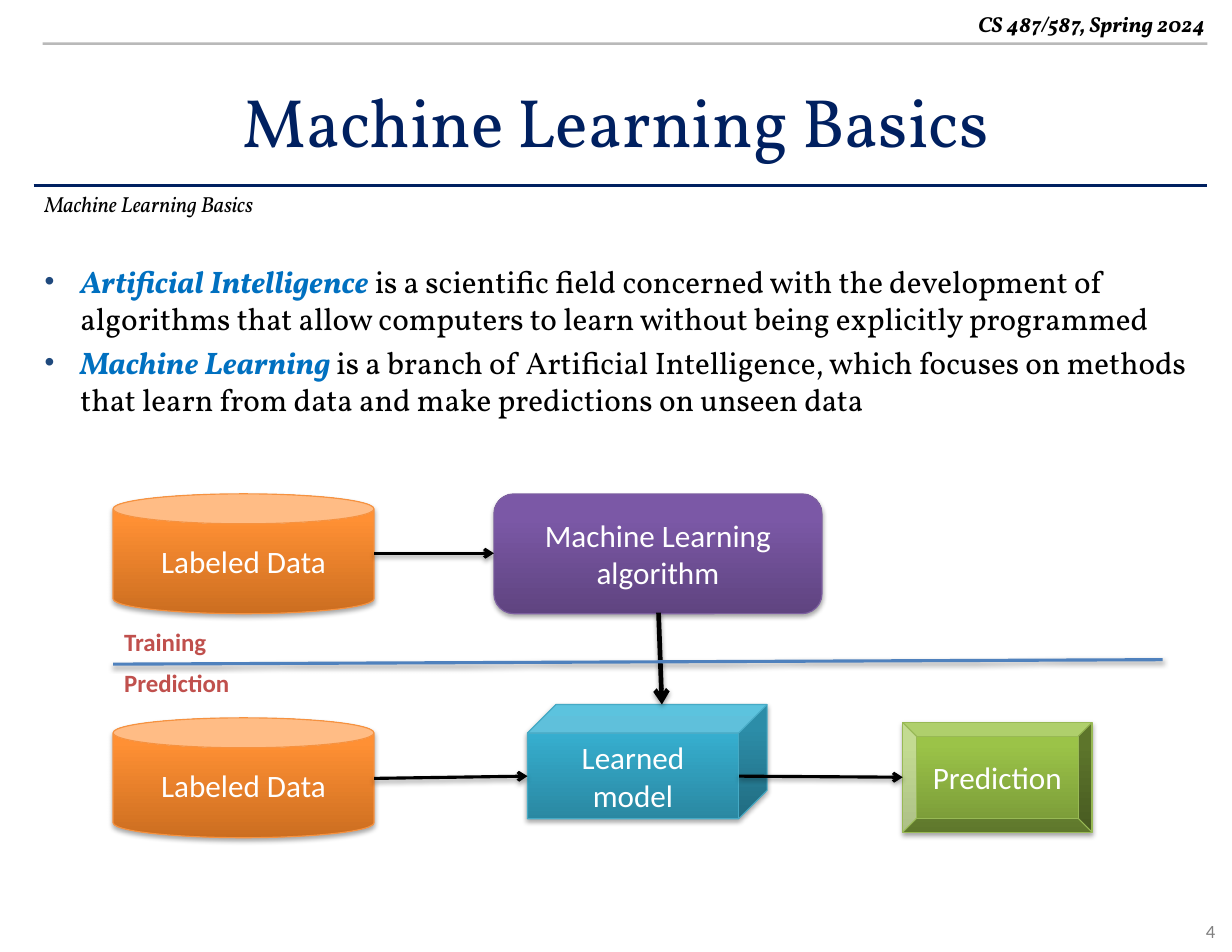
from copy import deepcopy
from dataclasses import dataclass

from pptx import Presentation
from pptx.dml.color import RGBColor
from pptx.enum.shapes import MSO_CONNECTOR, MSO_SHAPE
from pptx.enum.text import MSO_ANCHOR, PP_ALIGN
from pptx.oxml import parse_xml
from pptx.oxml.ns import nsdecls, qn
from pptx.util import Emu, Pt

PX = 9144  # EMU per px, 100 px to the inch
LEFT, CENTER, RIGHT = PP_ALIGN.LEFT, PP_ALIGN.CENTER, PP_ALIGN.RIGHT
TOP, MIDDLE = MSO_ANCHOR.TOP, MSO_ANCHOR.MIDDLE
STRAIGHT = MSO_CONNECTOR.STRAIGHT
CAN, ROUNDED = MSO_SHAPE.CAN, MSO_SHAPE.ROUNDED_RECTANGLE
CUBE, BEVEL = MSO_SHAPE.CUBE, MSO_SHAPE.BEVEL


@dataclass(frozen=True)
class Theme:
    serif: str = "Vollkorn"
    sans: str = "Calibri"
    black: str = "000000"
    white: str = "FFFFFF"
    navy: str = "002060"
    gray: str = "808080"
    term: str = "0070C0"
    bullet: str = "1F497D"
    divider: str = "4F81BD"
    label: str = "C0504D"
    # outline, then gradient from bottom to top
    orange: tuple = ("F69240", "CC6E20", "FF9034", "FF9136")
    purple: tuple = ("7D60A0", "5F4480", "7B58A6", "7C57A8")
    teal: tuple = ("46AAC5", "2A88A2", "37B1D2", "34B4D6")
    green: tuple = ("98B955", "779737", "9BC348", "9DC746")
    title_size: int = 44
    body_size: int = 20
    label_size: int = 16
    header_size: int = 14
    page_size: int = 12


def rgb(color):
    return RGBColor.from_string(color)


def px(*lengths):
    return [Emu(n * PX) for n in lengths]


class Slide:
    def __init__(self, prs, theme):
        self.t = theme
        self.s = prs.slides.add_slide(prs.slide_layouts[6])

    def font(self, run, size, color, name, bold=False, italic=False):
        f = run.font
        f.size, f.name, f.bold, f.italic = Pt(size), name, bold, italic
        f.color.rgb = rgb(color)

    def shadow(self, sp, alpha, dist):
        sp._element.spPr.append(parse_xml(
            f'<a:effectLst {nsdecls("a")}><a:outerShdw blurRad="40000" dist="{dist}" '
            f'dir="5400000" rotWithShape="0"><a:srgbClr val="{self.t.black}">'
            f'<a:alpha val="{alpha}000"/></a:srgbClr></a:outerShdw></a:effectLst>'))

    def text(self, box, text, size, color, name, align=LEFT, anchor=TOP,
             bold=False, italic=False, wrap=True):
        tf = self.s.shapes.add_textbox(*px(*box)).text_frame
        tf.word_wrap, tf.vertical_anchor = wrap, anchor
        p = tf.paragraphs[0]
        p.text, p.alignment = text, align
        self.font(p.runs[0], size, color, name, bold, italic)

    def bullets(self, box, items, indent):
        t = self.t
        tf = self.s.shapes.add_textbox(*px(*box)).text_frame
        tf.word_wrap = True
        for i, (term, rest) in enumerate(items):
            p = tf.add_paragraph() if i else tf.paragraphs[0]
            if i:
                p.space_before = Pt(t.body_size * 0.2)
            pPr = p._p.get_or_add_pPr()
            pPr.set("marL", str(indent * PX))
            pPr.set("indent", str(-indent * PX))
            for xml in (f'<a:buClr {nsdecls("a")}><a:srgbClr val="{t.bullet}"/></a:buClr>',
                        f'<a:buSzPct {nsdecls("a")} val="90000"/>',
                        f'<a:buFont {nsdecls("a")} typeface="Arial"/>',
                        f'<a:buChar {nsdecls("a")} char="•"/>'):
                pPr.append(parse_xml(xml))
            p.text = term
            self.font(p.runs[0], t.body_size, t.term, t.serif, True, True)
            r = p.add_run()
            r.text = rest
            self.font(r, t.body_size, t.black, t.serif)

    def node(self, kind, box, text, colors):
        outline, *stops = colors
        sp = self.s.shapes.add_shape(kind, *px(*box))
        sp.fill.gradient()
        sp.fill.gradient_angle = 90
        gs_list = sp._element.spPr.find(".//" + qn("a:gsLst"))
        gs_list.append(deepcopy(gs_list[-1]))
        for stop, color, pos in zip(sp.fill.gradient_stops, stops, (0, 0.8, 1)):
            stop.color.rgb, stop.position = rgb(color), pos
        sp.line.color.rgb, sp.line.width = rgb(outline), Pt(0.75)
        self.shadow(sp, 35, 23000)
        tf = sp.text_frame
        tf.word_wrap, tf.vertical_anchor = True, MIDDLE
        tf.margin_left, tf.margin_right = px(12, 12)
        p = tf.paragraphs[0]
        p.text, p.alignment = text, CENTER
        self.font(p.runs[0], self.t.body_size, self.t.white, self.t.sans)

    def line(self, ends, color, width, arrow=False, shadow=True, alpha=100):
        c = self.s.shapes.add_connector(STRAIGHT, *px(*ends))
        c.line.color.rgb, c.line.width = rgb(color), Pt(width)
        ln = c.line._get_or_add_ln()
        if alpha < 100:
            ln.find(".//" + qn("a:srgbClr")).append(
                parse_xml(f'<a:alpha {nsdecls("a")} val="{alpha}000"/>'))
        if arrow:
            ln.append(parse_xml(f'<a:tailEnd {nsdecls("a")} type="arrow"/>'))
        if shadow:
            self.shadow(c, 38, 20000)
        else:
            c._element.spPr.append(parse_xml(f'<a:effectLst {nsdecls("a")}/>'))


def main():
    prs = Presentation()
    prs.slide_width, prs.slide_height = px(1100, 850)
    t = Theme()
    s = Slide(prs, t)

    # Page frame
    s.text((974, 816, 121, 30), "4", t.page_size, t.gray, t.sans, RIGHT)
    s.line((30, 166, 1078, 166), t.navy, 2, shadow=False)
    s.text((12, 5, 1074, 34), "CS 487/587, Spring 2024", t.header_size, t.black,
           t.serif, RIGHT, bold=True, italic=True)
    s.line((38, 39, 1078, 39), t.gray, 1.5, shadow=False, alpha=55)

    # Title, definitions and section name
    s.text((0, 50, 1100, 115), "Machine Learning Basics", t.title_size, t.navy,
           t.serif, CENTER, MIDDLE)
    s.bullets((30, 229, 1048, 587), [
        ("Artificial Intelligence ",
         "is a scientific field concerned with the development of algorithms that "
         "allow computers to learn without being explicitly programmed"),
        ("Machine Learning ",
         "is a branch of Artificial Intelligence, which focuses on methods that "
         "learn from data and make predictions on unseen data"),
    ], indent=32)
    s.text((30, 165, 677, 38), "Machine Learning Basics", t.header_size, t.black,
           t.serif, italic=True)

    # Diagram nodes
    for top in (441, 641):
        s.node(CAN, (101, top, 233, 107), "Labeled Data", t.orange)
    s.node(ROUNDED, (441, 441, 293, 107), "Machine Learning algorithm", t.purple)
    s.node(CUBE, (471, 629, 214, 102), "Learned model", t.teal)
    s.node(BEVEL, (806, 645, 169, 98), "Prediction", t.green)

    # Arrows
    for ends, width in (((334, 494, 441, 494), 2), ((334, 695, 471, 693), 2),
                        ((660, 693, 806, 694), 2), ((588, 547, 591, 629), 3)):
        s.line(ends, t.black, width, arrow=True)

    # Divider between the two phases
    s.line((101, 593, 1038, 589), t.divider, 2)
    for text, top, width in (("Training", 555, 105), ("Prediction", 591, 130)):
        s.text((101, top, width, 38), text, t.label_size, t.label, t.sans,
               bold=True, wrap=False)

    prs.save("out.pptx")


if __name__ == "__main__":
    main()
